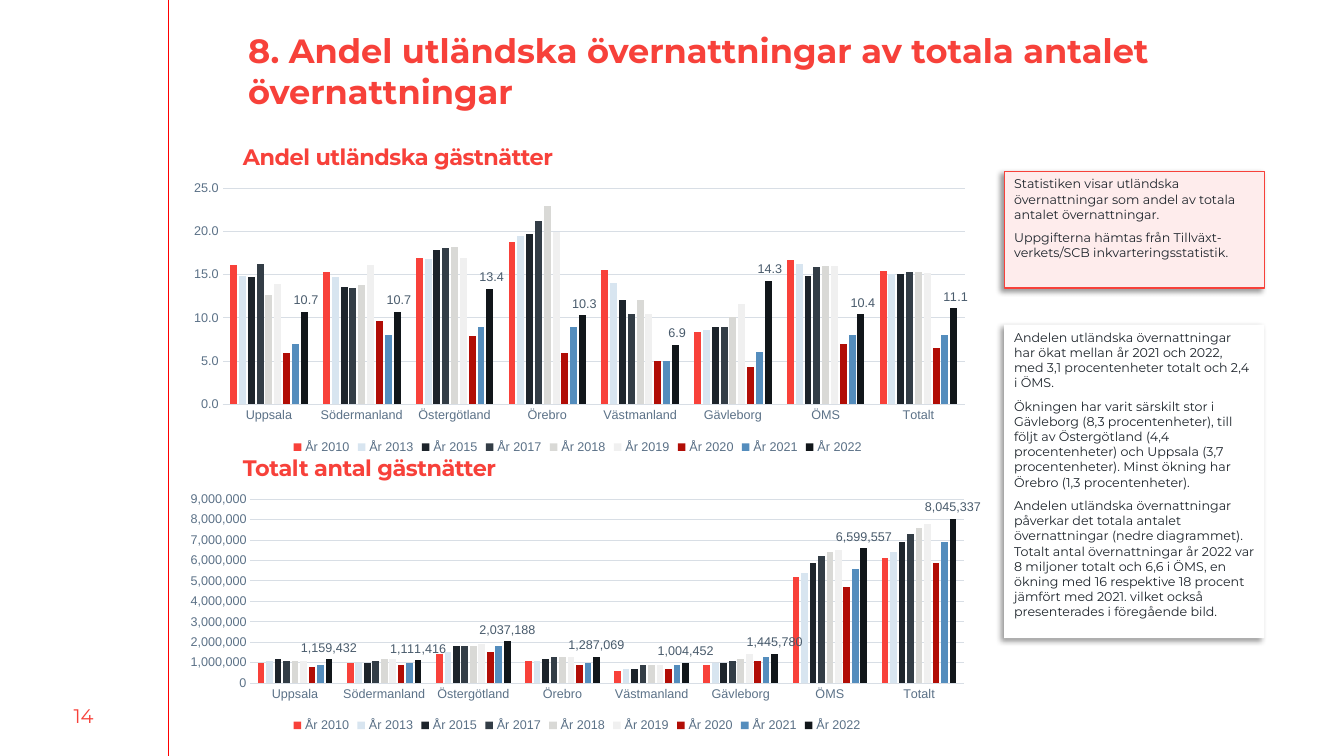
from lxml import etree
from pptx import Presentation
from pptx.chart.data import CategoryChartData
from pptx.dml.color import RGBColor
from pptx.enum.chart import XL_CHART_TYPE, XL_LABEL_POSITION, XL_LEGEND_POSITION, XL_TICK_MARK
from pptx.enum.shapes import MSO_CONNECTOR, MSO_SHAPE
from pptx.enum.text import MSO_ANCHOR, MSO_AUTO_SIZE, PP_ALIGN
from pptx.oxml import parse_xml
from pptx.oxml.ns import nsdecls, qn
from pptx.util import Inches, Pt

COLUMNS = XL_CHART_TYPE.COLUMN_CLUSTERED
OUTSIDE_END = XL_LABEL_POSITION.OUTSIDE_END
BOTTOM = XL_LEGEND_POSITION.BOTTOM
NO_TICK = XL_TICK_MARK.NONE
TOP, MIDDLE = MSO_ANCHOR.TOP, MSO_ANCHOR.MIDDLE
LEFT, CENTER = PP_ALIGN.LEFT, PP_ALIGN.CENTER

RED = RGBColor(0xF7, 0x41, 0x3A)
LINE_RED = RGBColor(0xFF, 0x00, 0x00)
PINK = RGBColor(0xFE, 0xEC, 0xEC)
WHITE = RGBColor(0xFF, 0xFF, 0xFF)
INK = RGBColor(0x1D, 0x24, 0x2B)
AXIS_TEXT = RGBColor(0x5B, 0x71, 0x87)
LABEL_TEXT = RGBColor(0x49, 0x5B, 0x6C)
GRID = RGBColor(0xD8, 0xDE, 0xE5)
SERIES_COLORS = [
    RGBColor(0xF8, 0x41, 0x3A), RGBColor(0xD8, 0xE5, 0xF0), RGBColor(0x1D, 0x24, 0x2B),
    RGBColor(0x33, 0x3D, 0x46), RGBColor(0xD9, 0xD9, 0xD6), RGBColor(0xF0, 0xF0, 0xF0),
    RGBColor(0xB1, 0x0D, 0x06), RGBColor(0x54, 0x8D, 0xBD), RGBColor(0x11, 0x16, 0x1A),
]

YEARS = [2010, 2013, 2015, 2017, 2018, 2019, 2020, 2021, 2022]
REGIONS = ["Uppsala", "Södermanland", "Östergötland", "Örebro",
           "Västmanland", "Gävleborg", "ÖMS", "Totalt"]
FOREIGN_SHARE = [
    [16.1, 15.3, 16.9, 18.8, 15.6, 8.4, 16.7, 15.4],
    [14.8, 14.7, 16.8, 19.5, 14, 8.6, 16.2, 15.1],
    [14.7, 13.6, 17.9, 19.7, 12.1, 8.9, 14.8, 15.1],
    [16.3, 13.5, 18.1, 21.2, 10.5, 9, 15.9, 15.3],
    [12.6, 13.8, 18.2, 23, 12.1, 10.1, 16, 15.3],
    [13.9, 16.1, 16.9, 19.9, 10.4, 11.6, 16, 15.2],
    [5.9, 9.6, 7.9, 5.9, 5, 4.3, 7, 6.5],
    [7, 8, 9, 9, 5, 6, 8, 8],
    [10.7, 10.7, 13.4, 10.3, 6.9, 14.3, 10.4, 11.1],
]
# Guest nights in millions; the last year is exact
NIGHTS_MILLIONS = [
    [1.0, 1.0, 1.4, 1.1, 0.6, 0.9, 5.2, 6.1],
    [1.1, 1.0, 1.5, 1.1, 0.7, 1.0, 5.4, 6.4],
    [1.2, 1.0, 1.8, 1.2, 0.7, 1.0, 5.9, 6.9],
    [1.1, 1.1, 1.8, 1.3, 0.9, 1.1, 6.2, 7.3],
    [1.1, 1.2, 1.8, 1.3, 0.9, 1.2, 6.4, 7.6],
    [1.1, 1.2, 1.9, 1.3, 0.9, 1.4, 6.5, 7.8],
    [0.8, 0.9, 1.5, 0.9, 0.7, 1.1, 4.7, 5.9],
    [0.9, 1.0, 1.8, 1.0, 0.9, 1.3, 5.6, 6.9],
]
NIGHTS = [[round(v * 1_000_000) for v in row] for row in NIGHTS_MILLIONS]
NIGHTS.append([1159432, 1111416, 2037188, 1287069, 1004452, 1445780, 6599557, 8045337])


def write(shape, *texts, size=9, color=INK, bold=False, align=LEFT, anchor=TOP,
          inset=(0.1, 0.05), gap=0, spacing=None):
    tf = shape.text_frame
    tf.word_wrap = True
    tf.auto_size = MSO_AUTO_SIZE.NONE
    tf.vertical_anchor = anchor
    tf.margin_left = tf.margin_right = Inches(inset[0])
    tf.margin_top = tf.margin_bottom = Inches(inset[1])
    for i, text in enumerate(texts):
        p = tf.paragraphs[0] if i == 0 else tf.add_paragraph()
        p.alignment = align
        p.space_before = Pt(gap if i else 0)
        p.space_after = Pt(gap)
        r = p.add_run()
        r.text = text
        r.font.name, r.font.size, r.font.bold = "Montserrat", Pt(size), bold
        r.font.color.rgb = color
        if spacing is not None:
            r.font._element.set("spc", str(spacing))


def style_font(font, size, color):
    font.name, font.size, font.bold = "Arial", Pt(size), False
    font.color.rgb = color


prs = Presentation()
prs.slide_width, prs.slide_height = Inches(13.33), Inches(7.5)
s = prs.slides.add_slide(prs.slide_layouts[5])

# Left margin: rule and page number
rule = s.shapes.add_connector(MSO_CONNECTOR.STRAIGHT, Inches(1.67), 0, Inches(1.67), Inches(7.5))
rule.line.color.rgb = LINE_RED
rule.line.width = Pt(0.75)
etree.SubElement(rule._element.spPr, qn("a:effectLst"))
page = s.shapes.add_textbox(0, Inches(6.9), Inches(1.66), Inches(0.4))
write(page, "14", size=14, color=RED, align=CENTER, anchor=MIDDLE)

# Title
title = s.shapes.title
title.left, title.top = Inches(2.41), Inches(0.25)
title.width, title.height = Inches(10.12), Inches(0.89)
write(title, "8. Andel utländska övernattningar av totala antalet övernattningar",
      size=24, color=RED, bold=True, inset=(0.05, 0.05))

# Note boxes
notes = [
    (1.7, 1.16, PINK, RED, [
        "Statistiken visar utländska övernattningar som andel av totala antalet övernattningar.",
        "Uppgifterna hämtas från Tillväxt-verkets/SCB inkvarteringsstatistik."]),
    (3.22, 3.11, WHITE, None, [
        "Andelen utländska övernattningar har ökat mellan år 2021 och 2022, med 3,1 "
        "procentenheter totalt och 2,4 i ÖMS.",
        "Ökningen har varit särskilt stor i Gävleborg (8,3 procentenheter), till följt av "
        "Östergötland (4,4 procentenheter) och Uppsala (3,7 procentenheter). Minst ökning "
        "har Örebro (1,3 procentenheter).",
        "Andelen utländska övernattningar påverkar det totala antalet övernattningar (nedre "
        "diagrammet). Totalt antal övernattningar år 2022 var 8 miljoner totalt och 6,6 i "
        "ÖMS, en ökning med 16 respektive 18 procent jämfört med 2021. vilket också "
        "presenterades i föregående bild."]),
]
for top, height, fill, border, texts in notes:
    sp = s.shapes.add_shape(MSO_SHAPE.RECTANGLE, Inches(9.96), Inches(top),
                            Inches(2.58), Inches(height))
    sp.fill.solid()
    sp.fill.fore_color.rgb = fill
    if border is None:
        sp.line.fill.background()
    else:
        sp.line.color.rgb = border
        sp.line.width = Pt(1)
    sp._element.spPr.append(parse_xml(
        f'<a:effectLst {nsdecls("a")}><a:outerShdw blurRad="{Pt(4)}" dist="{Pt(3)}" '
        'dir="8100000" algn="tr" rotWithShape="0"><a:srgbClr val="000000">'
        '<a:alpha val="40000"/></a:srgbClr></a:outerShdw></a:effectLst>'))
    write(sp, *texts, gap=3)

# Headings and column charts
charts = [
    ("Andel utländska gästnätter", 1.37, 1.74, 2.81, FOREIGN_SHARE, r"#\ ##0.0", 25, 5),
    ("Totalt antal gästnätter", 4.46, 4.83, 2.48, NIGHTS, "#,##0", 9_000_000, 1_000_000),
]
for heading, heading_top, top, height, rows, number_format, maximum, step in charts:
    tb = s.shapes.add_textbox(Inches(2.41), Inches(heading_top), Inches(7.15), Inches(0.36))
    write(tb, heading, size=16, color=RED, bold=True, inset=(0, 0.05), spacing=-30)

    data = CategoryChartData(number_format=number_format)
    data.categories = REGIONS
    for year, row in zip(YEARS, rows):
        data.add_series(f"År {year}", row)
    chart = s.shapes.add_chart(COLUMNS, Inches(1.73), Inches(top), Inches(8),
                               Inches(height), data).chart
    chart.has_title = False
    style_font(chart.font, 10, INK)
    chart.has_legend = True
    chart.legend.position = BOTTOM
    chart.legend.include_in_layout = False
    style_font(chart.legend.font, 9, AXIS_TEXT)

    cat, val = chart.category_axis, chart.value_axis
    for axis in (cat, val):
        axis.major_tick_mark = axis.minor_tick_mark = NO_TICK
        style_font(axis.tick_labels.font, 9, AXIS_TEXT)
    val.has_major_gridlines = True
    for line in (cat.format.line, val.major_gridlines.format.line):
        line.color.rgb = GRID
        line.width = Pt(0.75)
    val.format.line.fill.background()
    val.minimum_scale, val.maximum_scale, val.major_unit = 0, maximum, step
    val.tick_labels.number_format = number_format
    val.tick_labels.number_format_is_linked = False

    plot = chart.plots[0]
    plot.gap_width, plot.overlap, plot.vary_by_categories = 219, -27, False
    for series, color in zip(plot.series, SERIES_COLORS):
        series.invert_if_negative = False
        series.format.fill.solid()
        series.format.fill.fore_color.rgb = color
    labels = plot.series[-1].data_labels
    labels.show_value = True
    labels.position = OUTSIDE_END
    labels.number_format = number_format
    labels.number_format_is_linked = False
    style_font(labels.font, 9, LABEL_TEXT)

prs.save("out.pptx")
